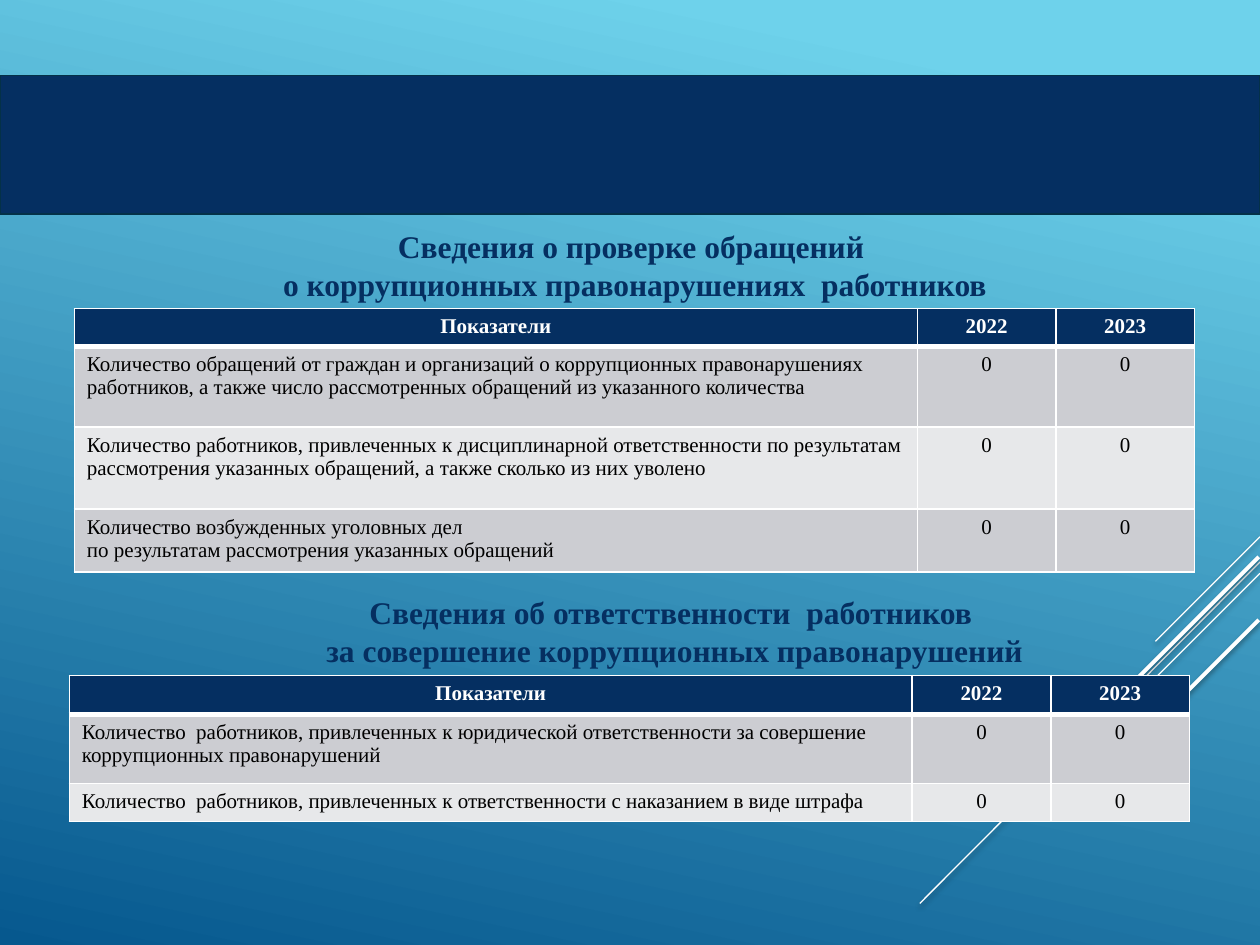
import pptx
import pptx.dml.color
import pptx.enum.shapes
import pptx.enum.text
import pptx.oxml
import pptx.oxml.ns
import pptx.util
from pptx.util import Inches

NAVY, WHITE, BLACK = "052F61", "FFFFFF", "000000"
BANDS = ("CCCDD2", "E7E8EA")
FONT = "Times New Roman"
COLUMN_WIDTHS = (6.69, 1.1, 1.1)
HEADER = ("Показатели", "2022", "2023")
CENTER = pptx.enum.text.PP_ALIGN.CENTER
LEFT = pptx.enum.text.PP_ALIGN.LEFT

DIAGONALS = (
    (10, 4.26, 9.17, 5.09, 0.75),
    (10, 4.46, 7.3, 7.17, 0.75),
    (10, 4.55, 8.28, 6.27, 0.75),
    (9.99, 4.42, 8.42, 5.99, 2.25),
    (9.99, 4.92, 8.85, 6.06, 2.25),
)
CHECKS = (
    "Количество обращений от граждан и организаций о коррупционных правонарушениях  "
    "работников, а также число рассмотренных обращений из указанного количества",
    "Количество работников, привлеченных к дисциплинарной ответственности по результатам "
    "рассмотрения указанных обращений, а также сколько из них уволено",
    "Количество возбужденных уголовных дел\nпо результатам рассмотрения указанных обращений",
)
LIABILITY = (
    "Количество  работников, привлеченных к юридической ответственности за совершение "
    "коррупционных правонарушений",
    "Количество  работников, привлеченных к ответственности с наказанием в виде штрафа",
)


def rgb(value):
    """Turn a hex string into a colour."""
    return pptx.dml.color.RGBColor.from_string(value)


def xml(markup):
    """Parse DrawingML markup whose root takes the namespace."""
    return pptx.oxml.parse_xml(markup.replace("NS", pptx.oxml.ns.nsdecls("a"), 1))


def write(frame, text, size, color, bold, align):
    """Set the text of a frame and format all its runs."""
    frame.text = text
    for para in frame.paragraphs:
        para.alignment = align
        para.space_before = pptx.util.Pt(0)
        for span in para.runs:
            span.font.name = FONT
            span.font.size = pptx.util.Pt(size)
            span.font.bold = bold
            span.font.color.rgb = rgb(color)


def paint_background(page):
    """Fill the page with a slanted blue gradient."""
    fill = page.background.fill
    fill.gradient()
    fill.gradient_angle = 360 - 102
    for stop, position, color in zip(fill.gradient_stops, (0.1, 1), ("6ED2EB", "06588E")):
        stop.position = position
        stop.color.rgb = rgb(color)


def add_diagonals(page):
    """Draw the shadowed white strokes in the lower right corner."""
    for x1, y1, x2, y2, width in DIAGONALS:
        stroke = page.shapes.add_connector(
            pptx.enum.shapes.MSO_CONNECTOR.STRAIGHT,
            Inches(x1), Inches(y1), Inches(x2), Inches(y2))
        stroke.line.color.rgb = rgb(WHITE)
        stroke.line.width = pptx.util.Pt(width)
        stroke.element.spPr.append(xml(
            '<a:effectLst NS><a:outerShdw blurRad="39370" dist="20320" dir="5400000">'
            '<a:srgbClr val="000000"><a:alpha val="38000"/></a:srgbClr>'
            '</a:outerShdw></a:effectLst>'))


def add_band(page, left, top, width, height):
    """Draw the dark band across the page."""
    band = page.shapes.add_shape(
        pptx.enum.shapes.MSO_SHAPE.FLOWCHART_PROCESS,
        Inches(left), Inches(top), Inches(width), Inches(height))
    band.shadow.inherit = False
    band.fill.solid()
    band.fill.fore_color.rgb = rgb(NAVY)
    band.line.color.rgb = rgb("043148")
    band.line.width = pptx.util.Pt(1)


def place_heading(box, left, top, width, height, text):
    """Move a text shape into place and set it as a section heading."""
    box.left, box.top = Inches(left), Inches(top)
    box.width, box.height = Inches(width), Inches(height)
    frame = box.text_frame
    frame.word_wrap = True
    frame.auto_size = pptx.enum.text.MSO_AUTO_SIZE.NONE
    frame.vertical_anchor = pptx.enum.text.MSO_ANCHOR.TOP
    write(frame, text, 18, NAVY, True, CENTER)


def style_cell(cell, fill, top, bottom):
    """Fill a cell and give it white borders, with top and bottom widths in points."""
    cell.fill.solid()
    cell.fill.fore_color.rgb = rgb(fill)
    properties = cell._tc.get_or_add_tcPr()
    for index, (side, width) in enumerate(zip("LRTB", (1, 1, top, bottom))):
        properties.insert(index, xml(
            f'<a:ln{side} NS w="{pptx.util.Pt(width)}"><a:solidFill>'
            f'<a:srgbClr val="{WHITE}"/></a:solidFill></a:ln{side}>'))


def add_indicators(page, left, top, heights, labels):
    """Add a table of indicators by year, all of them zero."""
    rows = [HEADER] + [(label, "0", "0") for label in labels]
    table = page.shapes.add_table(
        len(rows), len(HEADER), Inches(left), Inches(top),
        Inches(sum(COLUMN_WIDTHS)), Inches(sum(heights))).table
    for column, width in zip(table.columns, COLUMN_WIDTHS):
        column.width = Inches(width)
    for r, (texts, height) in enumerate(zip(rows, heights)):
        table.rows[r].height = Inches(height)
        header = r == 0
        for c, text in enumerate(texts):
            cell = table.cell(r, c)
            style_cell(cell, NAVY if header else BANDS[(r - 1) % 2],
                       3 if r == 1 else 1, 3 if header else 1)
            write(cell.text_frame, text, 12, WHITE if header else BLACK, header,
                  CENTER if header or c else LEFT)


def main():
    """Build the deck and save it."""
    deck = pptx.Presentation()
    deck.slide_width, deck.slide_height = Inches(10), Inches(7.5)
    page = deck.slides.add_slide(deck.slide_layouts.get_by_name("Title Only"))
    paint_background(page)
    add_diagonals(page)
    add_band(page, 0, 0.6, 10, 1.1)
    add_indicators(page, 0.59, 2.45, (0.3, 0.64, 0.65, 0.5), CHECKS)
    place_heading(page.shapes.title, 0.67, 1.75, 8.74, 0.7,
                  "Сведения о проверке обращений \nо коррупционных правонарушениях  работников")
    place_heading(page.shapes.add_textbox(0, 0, 0, 0), 0.71, 4.66, 9.29, 0.7,
                  "Сведения об ответственности  работников \n"
                  "за совершение коррупционных правонарушений")
    add_indicators(page, 0.55, 5.36, (0.31, 0.55, 0.3), LIABILITY)
    deck.save("out.pptx")


if __name__ == "__main__":
    main()
